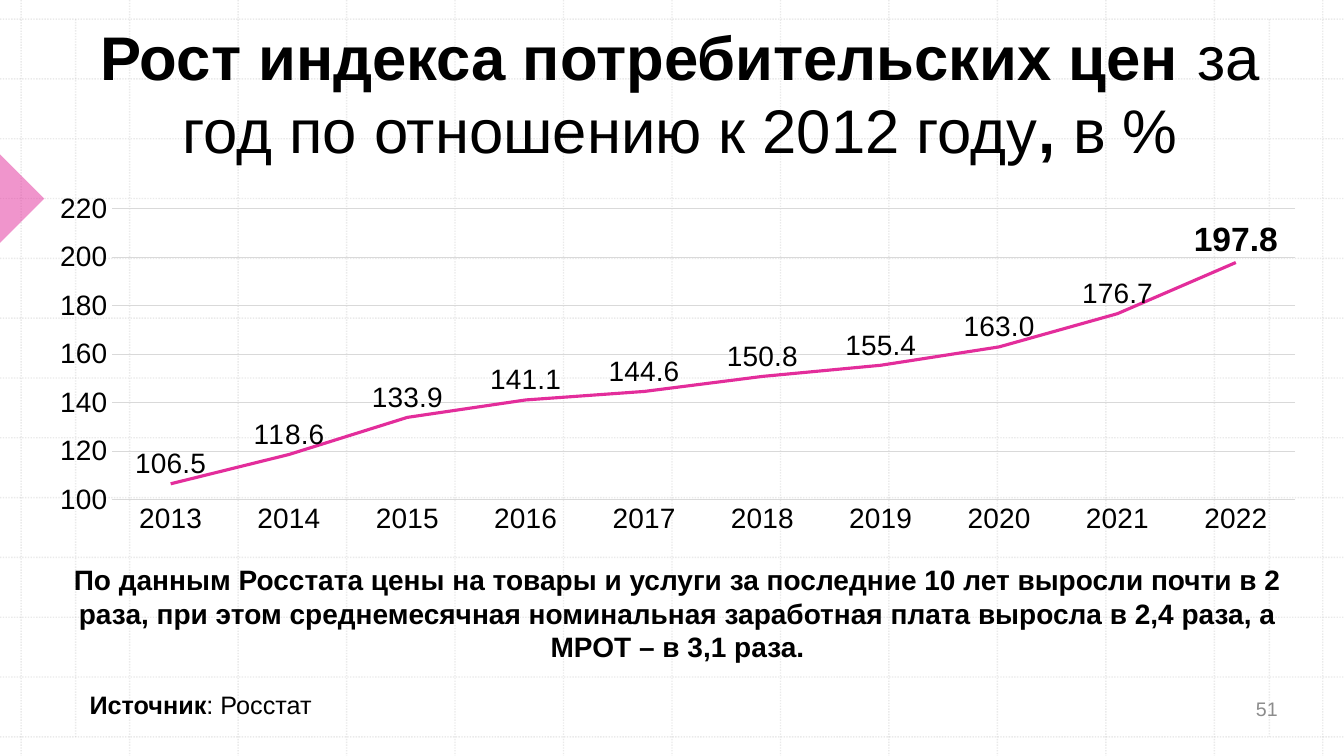
"""Build a slide on the growth of the consumer price index."""
from dataclasses import dataclass

from lxml import etree
from pptx import Presentation
from pptx.chart.chart import Chart
from pptx.chart.data import CategoryChartData
from pptx.dml.color import RGBColor
from pptx.dml.fill import FillFormat
from pptx.enum.chart import XL_CHART_TYPE, XL_LABEL_POSITION, XL_MARKER_STYLE, XL_TICK_MARK
from pptx.enum.dml import MSO_LINE
from pptx.enum.shapes import MSO_CONNECTOR, MSO_SHAPE
from pptx.enum.text import MSO_ANCHOR, MSO_AUTO_SIZE, PP_ALIGN
from pptx.oxml import parse_xml
from pptx.oxml.ns import nsdecls, qn
from pptx.slide import Slide
from pptx.text.text import TextFrame
from pptx.util import Inches, Pt

LINE = XL_CHART_TYPE.LINE
ABOVE = XL_LABEL_POSITION.ABOVE
PLAIN = XL_MARKER_STYLE.NONE
NO_TICK = XL_TICK_MARK.NONE
DOTS = MSO_LINE.ROUND_DOT
STRAIGHT = MSO_CONNECTOR.STRAIGHT
WEDGE = MSO_SHAPE.RIGHT_TRIANGLE
TOP, MIDDLE, BOTTOM = MSO_ANCHOR.TOP, MSO_ANCHOR.MIDDLE, MSO_ANCHOR.BOTTOM
FIXED = MSO_AUTO_SIZE.NONE
LEFT, CENTER = PP_ALIGN.LEFT, PP_ALIGN.CENTER

FACE = "Arial"
BLACK = RGBColor(0x00, 0x00, 0x00)
GRAY = RGBColor(0x8C, 0x8C, 0x8C)
MESH = RGBColor(0xBC, 0xBC, 0xBC)
PALE = RGBColor(0xD9, 0xD9, 0xD9)
PINK = RGBColor(0xE3, 0x2D, 0x9B)

WIDE, HIGH = 13.33, 7.5
INDEX = [106.5, 118.6, 133.9, 141.1, 144.6, 150.8, 155.4, 163.0, 176.7, 197.8]


@dataclass
class Rule:
    """A grid line from one point to another."""
    x1: float
    y1: float
    x2: float
    y2: float


@dataclass
class Note:
    """A text with its box, its runs as (words, bold) and its look."""
    box: tuple[float, float, float, float]
    runs: list[tuple[str, bool]]
    size: float
    color: RGBColor = BLACK
    align: PP_ALIGN = CENTER
    anchor: MSO_ANCHOR = TOP
    wrap: bool = True


TITLE = Note((0.38, 0.12, 12.73, 1.58), [
    ("Рост индекса потребительских цен ", True),
    ("за год по отношению к 2012 году", False),
    (", ", True),
    ("в %", False),
], 44, anchor=BOTTOM)
NOTES = [
    Note((0.79, 6.79, 2.43, 0.4), [("Источник", True), (": Росстат", False)],
         18, align=LEFT, wrap=False),
    Note((12.03, 6.8, 1.07, 0.46), [("51", False)], 14, GRAY, anchor=MIDDLE),
    Note((0.28, 5.53, 12.88, 1.11), [(
        "По данным Росстата цены на товары и услуги за последние 10 лет выросли "
        "почти в 2 раза, при этом среднемесячная номинальная заработная плата "
        "выросла в 2,4 раза, а МРОТ – в 3,1 раза.", True)], 20),
]
RULES = (
    [Rule(0.21 + i * 12.91 / 12, 0, 0.21 + i * 12.91 / 12, HIGH) for i in range(13)]
    + [Rule(0, 0.19 + i * 7.12 / 12, WIDE, 0.19 + i * 7.12 / 12) for i in range(13)]
    + [Rule(x, 0.19, x, 7.31) for x in (0.75, 12.59)]
)


def fade(fill: FillFormat, color: RGBColor, share: int, node: etree._Element) -> None:
    """Fill with a colour that is opaque to the given percentage."""
    fill.solid()
    fill.fore_color.rgb = color
    tint = next(node.iter(qn("a:srgbClr")))
    etree.SubElement(tint, qn("a:alpha"), val=str(share * 1000))


def draw_rule(slide: Slide, rule: Rule) -> None:
    """Draw one dotted grid line."""
    line = slide.shapes.add_connector(
        STRAIGHT, *map(Inches, (rule.x1, rule.y1, rule.x2, rule.y2)))
    line.line.width = Pt(1)
    fade(line.line.fill, MESH, 30, line.element.spPr)
    line.line.dash_style = DOTS
    etree.SubElement(line.element.spPr, qn("a:effectLst"))


def draw_wedge(slide: Slide) -> None:
    """Draw the pink pointer on the left edge."""
    wedge = slide.shapes.add_shape(WEDGE, *map(Inches, (-0.31, 1.66, 0.62, 0.62)))
    wedge.rotation = 225
    wedge.shadow.inherit = False
    fade(wedge.fill, PINK, 50, wedge.element.spPr)
    wedge.line.fill.background()


def write(frame: TextFrame, note: Note) -> None:
    """Write the runs of a note into a text frame."""
    frame.word_wrap = note.wrap
    frame.auto_size = FIXED
    frame.vertical_anchor = note.anchor
    para = frame.paragraphs[0]
    para.alignment = note.align
    para.font.name = FACE
    para.font.size = Pt(note.size)
    para.font.color.rgb = note.color
    for words, bold in note.runs:
        run = para.add_run()
        run.text = words
        run.font.bold = bold


def place_plot(chart: Chart) -> None:
    """Fix the inner plot area inside the chart."""
    area = next(chart.element.iter(qn("c:plotArea")))
    for old in area.findall(qn("c:layout")):
        area.remove(old)
    spots = {"x": 0.06, "y": 0.06, "w": 0.92, "h": 0.82}
    modes = "".join(f'<c:{key}Mode val="edge"/>' for key in "xy")
    sizes = "".join(f'<c:{key} val="{val}"/>' for key, val in spots.items())
    area.insert(0, parse_xml(
        f'<c:layout {nsdecls("c")}><c:manualLayout><c:layoutTarget val="inner"/>'
        f'{modes}{sizes}</c:manualLayout></c:layout>'))


def draw_chart(slide: Slide) -> None:
    """Draw the line chart of the price index."""
    data = CategoryChartData(number_format="#,##0.0")
    data.categories = [str(year) for year in range(2013, 2023)]
    data.add_series("Series 1", INDEX)
    chart = slide.shapes.add_chart(
        LINE, *map(Inches, (0.34, 1.86, 12.76, 3.52)), data).chart
    chart.has_title = False
    chart.has_legend = False
    chart.font.name = FACE
    chart.font.size = Pt(20)
    chart.font.color.rgb = BLACK

    years, scale = chart.category_axis, chart.value_axis
    for axis in (years, scale):
        axis.major_tick_mark = NO_TICK
        axis.minor_tick_mark = NO_TICK
    scale.minimum_scale, scale.maximum_scale, scale.major_unit = 100, 220, 20
    scale.tick_labels.number_format = "0"
    scale.tick_labels.number_format_is_linked = False
    scale.format.line.fill.background()
    for rule in (years.format.line, scale.major_gridlines.format.line):
        rule.color.rgb = PALE
        rule.width = Pt(0.75)

    plot = chart.plots[0]
    plot.vary_by_categories = False
    prices = plot.series[0]
    prices.smooth = False
    prices.marker.style = PLAIN
    prices.format.line.color.rgb = PINK
    prices.format.line.width = Pt(2.25)
    tags = prices.data_labels
    tags.show_value = True
    tags.position = ABOVE
    tags.number_format = "#,##0.0"
    tags.number_format_is_linked = False
    last = prices.points[len(INDEX) - 1].data_label
    last.position = ABOVE
    last.font.name = FACE
    last.font.size = Pt(24)
    last.font.bold = True
    last.font.color.rgb = BLACK
    place_plot(chart)


def main() -> None:
    """Build and save the slide."""
    deck = Presentation()
    deck.slide_width, deck.slide_height = Inches(WIDE), Inches(HIGH)
    slide = deck.slides.add_slide(deck.slide_layouts[5])
    for rule in RULES:
        draw_rule(slide, rule)
    draw_wedge(slide)
    title = slide.shapes.title
    title.left, title.top, title.width, title.height = map(Inches, TITLE.box)
    write(title.text_frame, TITLE)
    slide.shapes.element.append(title.element)
    draw_chart(slide)
    for note in NOTES:
        write(slide.shapes.add_textbox(*map(Inches, note.box)).text_frame, note)
    deck.save("out.pptx")


if __name__ == "__main__":
    main()
